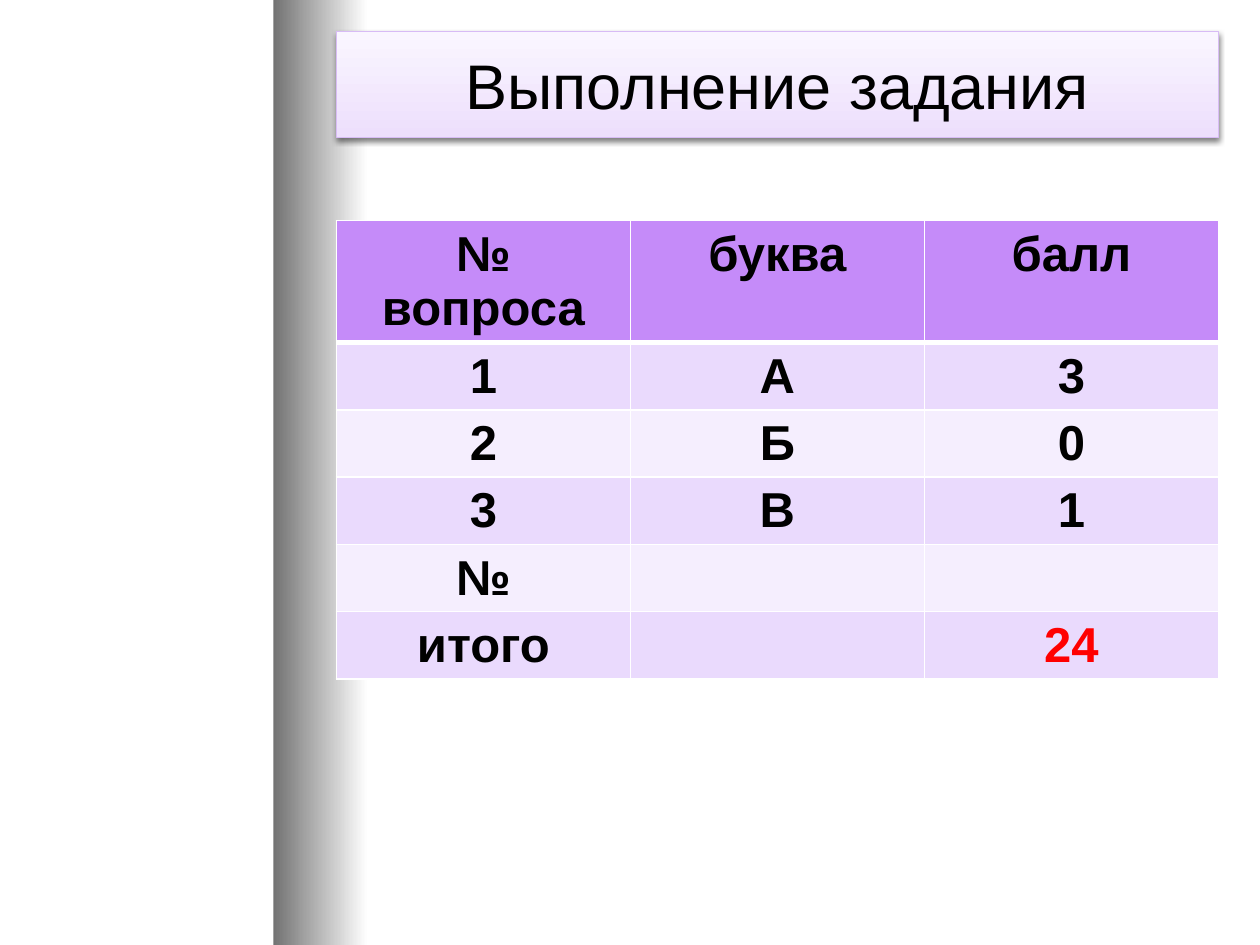
from lxml import etree
from pptx import Presentation
from pptx import util as u
from pptx.dml.color import RGBColor
from pptx.enum import shapes, text
from pptx.oxml import parse_xml
from pptx.oxml.ns import nsdecls, qn

BLACK = RGBColor(0x00, 0x00, 0x00)
WHITE = RGBColor(0xFF, 0xFF, 0xFF)
RED = RGBColor(0xFF, 0x00, 0x00)
GRAY = RGBColor(0x73, 0x73, 0x73)
TITLE_TOP = RGBColor(0xFA, 0xF6, 0xFF)
TITLE_BOTTOM = RGBColor(0xED, 0xDF, 0xFC)
TITLE_LINE = RGBColor(0xD8, 0xBC, 0xF5)
HEADER = RGBColor(0xC5, 0x8B, 0xF9)
BANDS = (RGBColor(0xEA, 0xDA, 0xFD), RGBColor(0xF5, 0xEE, 0xFE))

ROWS = [
    ("№ вопроса", "буква", "балл"),
    ("1", "А", "3"),
    ("2", "Б", "0"),
    ("3", "В", "1"),
    ("№", "", ""),
    ("итого", "", "24"),
]
HEADER_HEIGHT = u.Inches(0.97)
ROW_HEIGHT = u.Inches(0.53)


def fill_gradient(shape, start, end, angle):
    shape.fill.gradient()
    shape.fill.gradient_angle = angle
    for stop, color in zip(shape.fill.gradient_stops, (start, end)):
        stop.color.rgb = color


def add_fold(page, left, top, width, height):
    """Gray fading strip behind everything else."""
    strip = page.shapes.add_shape(shapes.MSO_SHAPE.RECTANGLE, left, top, width, height)
    strip.shadow.inherit = False
    strip.line.fill.background()
    fill_gradient(strip, GRAY, WHITE, 0)
    page.shapes._spTree.insert(2, strip._element)


def add_title(page, left, top, width, height):
    """Title on a pale violet panel with a soft shadow."""
    title = page.shapes.title
    title.left, title.top, title.width, title.height = left, top, width, height
    fill_gradient(title, TITLE_TOP, TITLE_BOTTOM, 270)
    title.line.color.rgb = TITLE_LINE
    title.line.width = u.Pt(0.75)
    title._element.spPr.append(parse_xml(
        f'<a:effectLst {nsdecls("a")}><a:outerShdw blurRad="40000" dist="23000" '
        'dir="5400000" rotWithShape="0"><a:srgbClr val="000000">'
        '<a:alpha val="50000"/></a:srgbClr></a:outerShdw></a:effectLst>'))
    frame = title.text_frame
    frame.text = "Выполнение задания"
    frame.vertical_anchor = text.MSO_ANCHOR.MIDDLE
    format_paragraph(frame.paragraphs[0], 36, False, BLACK)


def format_paragraph(para, size, bold, color):
    para.alignment = text.PP_ALIGN.CENTER
    para.font.name = "Arial"
    para.font.size = u.Pt(size)
    para.font.bold = bold
    para.font.color.rgb = color


def set_borders(cell, widths):
    """Draw white borders; widths are points by side."""
    properties = cell._tc.get_or_add_tcPr()
    for index, (side, width) in enumerate(widths.items()):
        line = etree.Element(qn(f"a:ln{side}"), w=str(u.Pt(width)))
        solid = etree.SubElement(line, qn("a:solidFill"))
        etree.SubElement(solid, qn("a:srgbClr"), val=str(WHITE))
        properties.insert(index, line)


def add_score_table(page, left, top, width):
    height = HEADER_HEIGHT + ROW_HEIGHT * (len(ROWS) - 1)
    table = page.shapes.add_table(
        len(ROWS), len(ROWS[0]), left, top, width, height).table
    for r, values in enumerate(ROWS):
        table.rows[r].height = ROW_HEIGHT if r else HEADER_HEIGHT
        for c, value in enumerate(values):
            cell = table.cell(r, c)
            cell.text = value
            cell.fill.solid()
            cell.fill.fore_color.rgb = BANDS[(r - 1) % 2] if r else HEADER
            # A thick rule parts the header from the first row
            set_borders(cell, {"L": 1, "R": 1, "T": 3 if r == 1 else 1,
                               "B": 3 if r == 0 else 1})
            color = RED if value == "24" else BLACK
            format_paragraph(cell.text_frame.paragraphs[0], 28, True, color)


def main():
    deck = Presentation()
    deck.slide_width, deck.slide_height = u.Inches(10), u.Inches(7.5)
    page = deck.slides.add_slide(deck.slide_layouts[5])
    left, width = u.Inches(2.67), u.Inches(7)
    add_fold(page, u.Inches(2.17), 0, u.Inches(0.75), deck.slide_height)
    add_title(page, left, u.Inches(0.25), width, u.Inches(0.84))
    add_score_table(page, left, u.Inches(1.75), width)
    deck.save("out.pptx")


if __name__ == "__main__":
    main()
